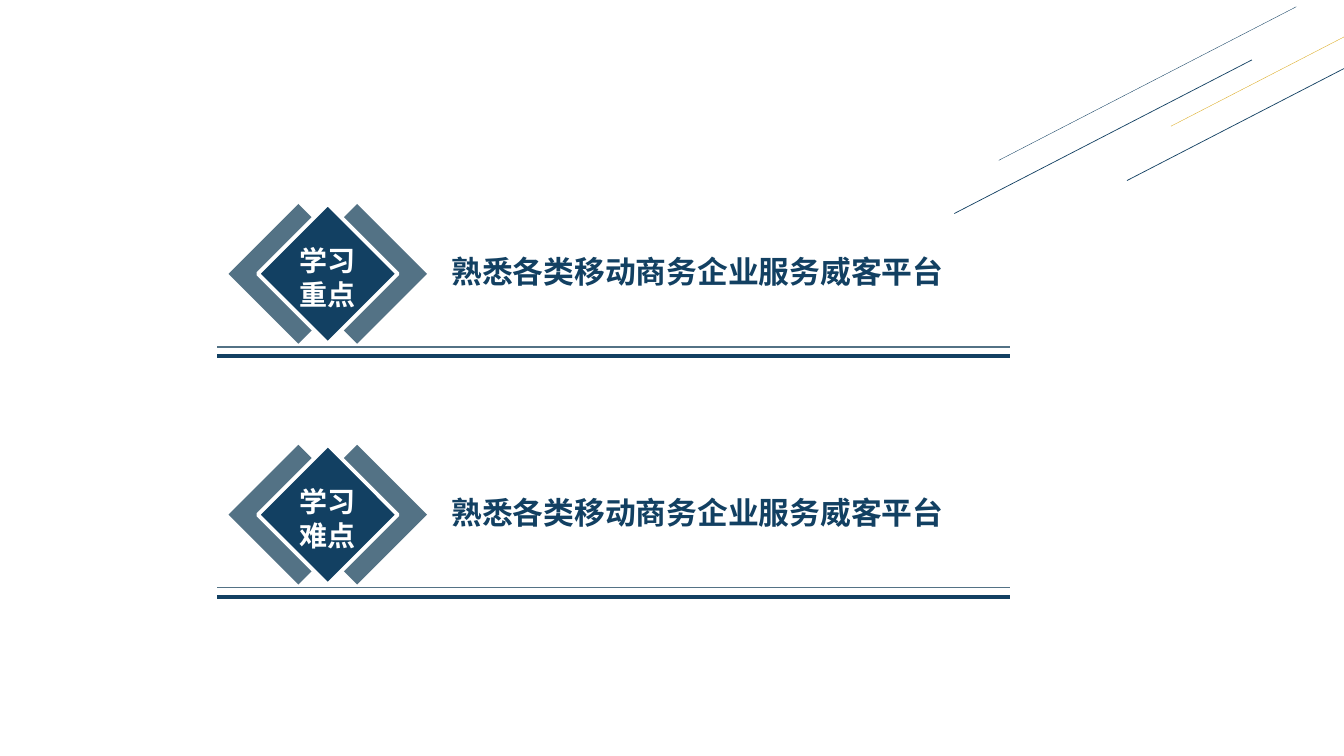
"""Build the slide of learning focus and learning difficulty."""
from dataclasses import dataclass

from lxml import etree
from pptx import Presentation
from pptx import util as u
from pptx.dml.color import RGBColor
from pptx.enum import shapes, text
from pptx.oxml import ns


@dataclass(frozen=True)
class Theme:
    """Colours, font and type sizes of the slide."""
    navy: str = "124062"
    slate: str = "537285"
    gold: str = "DCAA1F"
    white: str = "FFFFFF"
    font: str = "Noto Sans CJK SC"
    badge_size: int = 20
    topic_size: int = 22


THEME = Theme()
TOPICS = [
    ("学习\n重点", "熟悉各类移动商务企业服务威客平台"),
    ("学习\n难点", "熟悉各类移动商务企业服务威客平台"),
]
FIRST_CENTRE, TOPIC_PITCH = 6.9, 6.07
BADGE_X, DIAMOND_SIDE, WING_SHIFT = 8.26, 2.49, 0.74
RAIL_LEFT, RAIL_RIGHT = 5.46, 25.45
STREAK_RUN, STREAK_RISE = 7.5, 3.87
STREAKS = [
    (24.05, 5.38, THEME.navy, 0.5),
    (25.17, 4.04, THEME.navy, 0.25),
    (28.4, 4.55, THEME.navy, 0.5),
    (29.51, 3.18, THEME.gold, 0.25),
]


def add_line(parent, start, end, color, width):
    """Draw a straight line without a shadow."""
    line = parent.add_connector(
        shapes.MSO_CONNECTOR.STRAIGHT, *(u.Cm(v) for v in (*start, *end)))
    line.line.color.rgb = RGBColor.from_string(color)
    line.line.width = u.Pt(width)
    properties = line._element.find(ns.qn("p:spPr"))
    etree.SubElement(properties, ns.qn("a:effectLst"))


def add_diamond(parent, x, y, color, outline=None):
    """Draw a square turned by 45 degrees around the given centre."""
    half = DIAMOND_SIDE / 2
    diamond = parent.add_shape(
        shapes.MSO_SHAPE.ROUNDED_RECTANGLE, u.Cm(x - half), u.Cm(y - half),
        u.Cm(DIAMOND_SIDE), u.Cm(DIAMOND_SIDE))
    diamond.adjustments[0] = 0
    diamond.rotation = 45
    diamond.shadow.inherit = False
    diamond.fill.solid()
    diamond.fill.fore_color.rgb = RGBColor.from_string(color)
    if outline:
        diamond.line.color.rgb = RGBColor.from_string(outline)
        diamond.line.width = u.Pt(2.75)
    else:
        diamond.line.fill.background()


def add_text(parent, content, *, left, top, width, height, size, color, leading):
    """Write bold text, one paragraph a line, in a box that does not wrap."""
    box = parent.add_textbox(u.Cm(left), u.Cm(top), u.Cm(width), u.Cm(height))
    frame = box.text_frame
    frame.word_wrap = False
    frame.auto_size = text.MSO_AUTO_SIZE.SHAPE_TO_FIT_TEXT
    frame.text = content
    for paragraph in frame.paragraphs:
        paragraph.line_spacing = u.Pt(leading)
        for run in paragraph.runs:
            run.font.size = u.Pt(size)
            run.font.bold = True
            run.font.color.rgb = RGBColor.from_string(color)
            run.font.name = THEME.font
            east_asian = etree.SubElement(run.font._element, ns.qn("a:ea"))
            east_asian.set("typeface", THEME.font)


def add_rail(parent, y, color, width):
    """Draw a horizontal rule below a topic."""
    add_line(parent, (RAIL_RIGHT, y), (RAIL_LEFT, y), color, width)


def add_topic(slide, label, sentence, centre):
    """Draw one topic: badge, sentence and double rule."""
    add_rail(slide.shapes, centre + 1.84, THEME.slate, 1)
    for shift in (WING_SHIFT, -WING_SHIFT):
        add_diamond(slide.shapes, BADGE_X + shift, centre, THEME.slate)
    badge = slide.shapes.add_group_shape().shapes
    add_diamond(badge, BADGE_X, centre, THEME.navy, outline=THEME.white)
    add_text(badge, label, left=7.29, top=centre - 0.88, width=1.93, height=1.96,
             size=THEME.badge_size, color=THEME.white, leading=24)
    add_rail(slide.shapes, centre + 2.07, THEME.navy, 3)
    add_text(slide.shapes, sentence, left=11.13, top=centre - 0.88, width=12.93,
             height=1.42, size=THEME.topic_size, color=THEME.navy, leading=33)


def main():
    """Build and save the slide."""
    deck = Presentation()
    deck.slide_width, deck.slide_height = u.Cm(33.87), u.Cm(19.05)
    slide = deck.slides.add_slide(deck.slide_layouts.get_by_name("Blank"))
    for x, y, color, width in STREAKS:
        add_line(slide.shapes, (x, y), (x + STREAK_RUN, y - STREAK_RISE), color, width)
    for row, (label, sentence) in enumerate(TOPICS):
        add_topic(slide, label, sentence, FIRST_CENTRE + row * TOPIC_PITCH)
    deck.save("out.pptx")


if __name__ == "__main__":
    main()
